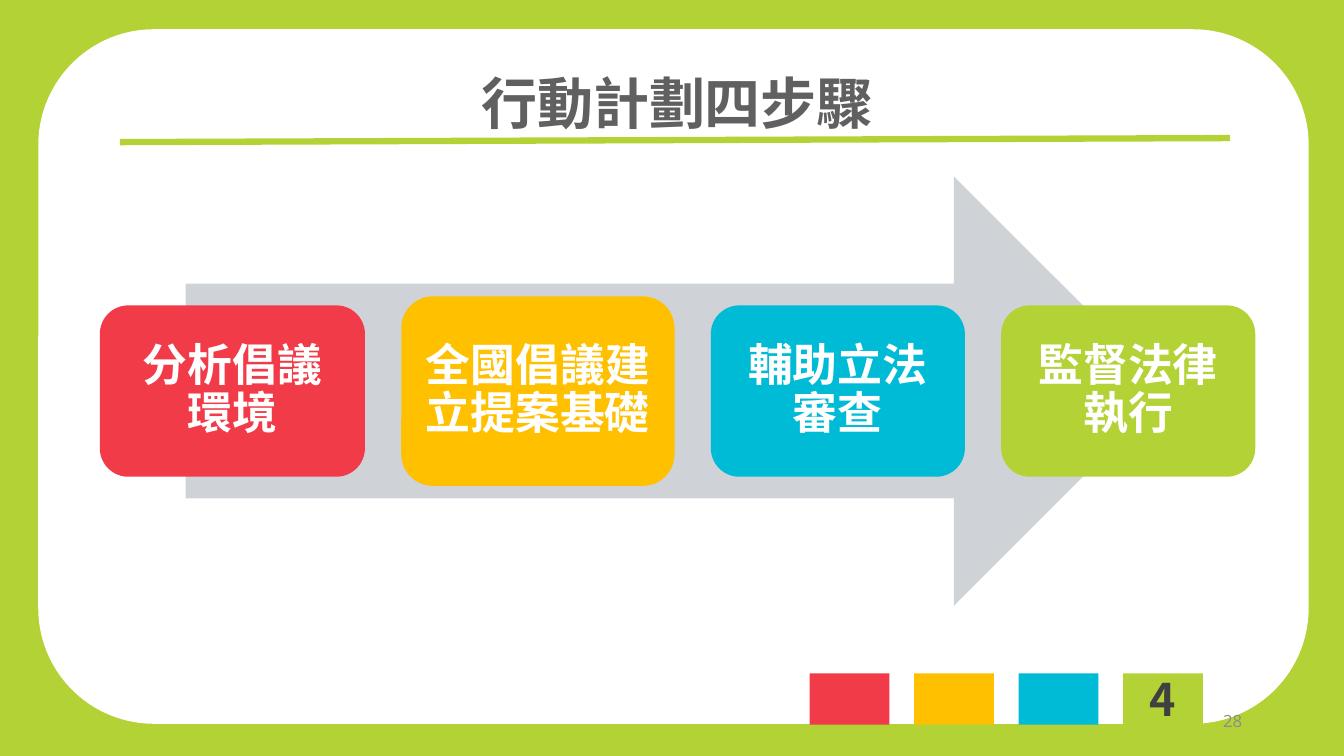
from lxml import etree
from pptx import Presentation
from pptx.dml.color import RGBColor
from pptx.enum.shapes import MSO_CONNECTOR, MSO_SHAPE
from pptx.enum.text import MSO_ANCHOR as Anchor, MSO_AUTO_SIZE, PP_ALIGN as Align
from pptx.oxml.ns import qn
from pptx.util import Inches, Pt

COLORS = {
    "green": "B3D236", "red": "F23B49", "yellow": "FFC000", "blue": "00BBD6",
    "white": "FFFFFF", "arrow": "CFD2D6", "title": "606060",
    "number": "404040", "page": "8C8C8C",
}
CJK_FONT = "Noto Sans CJK SC"
LATIN_FONT = "Open Sans"
STEP_COLORS = ["red", "yellow", "blue", "green"]
STEPS = [
    ("分析倡議環境", 2.63, 1.7),
    ("全國倡議建立提案基礎", 2.71, 1.88),
    ("輔助立法審查", 2.52, 1.7),
    ("監督法律執行", 2.52, 1.7),
]


def rgb(name):
    return RGBColor.from_string(COLORS[name])


def add_block(slide, kind, box, color):
    shape = slide.shapes.add_shape(kind, *map(Inches, box))
    shape.shadow.inherit = False
    shape.fill.solid()
    shape.fill.fore_color.rgb = rgb(color)
    shape.line.fill.background()
    return shape


def write_text(shape, text, color, size, font=CJK_FONT, bold=True, inset=0,
               align=Align.CENTER, anchor=Anchor.MIDDLE, spacing=1.0):
    frame = shape.text_frame
    margins = dict.fromkeys(
        ("margin_left", "margin_top", "margin_right", "margin_bottom"), Inches(inset))
    frame_format = {"word_wrap": True, "auto_size": MSO_AUTO_SIZE.NONE,
                    "vertical_anchor": anchor, **margins}
    for name, value in frame_format.items():
        setattr(frame, name, value)
    paragraph = frame.paragraphs[0]
    paragraph.alignment = align
    paragraph.line_spacing = spacing
    run = paragraph.add_run()
    run.text = text
    for name, value in {"name": font, "size": Pt(size), "bold": bold}.items():
        setattr(run.font, name, value)
    run.font.color.rgb = rgb(color)
    east_asian = etree.SubElement(run.font._element, qn("a:ea"))
    east_asian.set("typeface", font)


def add_panel(slide, box):
    background = slide.background.fill
    background.solid()
    background.fore_color.rgb = rgb("green")
    panel = add_block(slide, MSO_SHAPE.ROUNDED_RECTANGLE, box, "white")
    panel.element.getparent().insert(2, panel.element)


def add_title(slide, box):
    left, top, width, height = box
    title = slide.shapes.title
    position = {"left": left + 0.42, "top": top, "width": width - 0.8, "height": height}
    for name, value in position.items():
        setattr(title, name, Inches(value))
    write_text(title, "行動計劃四步驟", "title", 40, inset=0.05, anchor=Anchor.TOP)
    rule = slide.shapes.add_connector(
        MSO_CONNECTOR.STRAIGHT, Inches(left), Inches(top + 0.78),
        Inches(left + width), Inches(top + 0.74))
    rule.line.color.rgb = rgb("green")
    rule.line.width = Pt(4.5)
    etree.SubElement(rule.element.spPr, qn("a:effectLst"))


def add_process(slide, box):
    left, top, width, height = box
    add_block(slide, MSO_SHAPE.RIGHT_ARROW,
              (left + 0.85, top, width - 1.71, height), "arrow")
    gap = (width - sum(step[1] for step in STEPS)) / (len(STEPS) - 1)
    for (text, card_width, card_height), color in zip(STEPS, STEP_COLORS):
        card_top = top + (height - card_height) / 2
        card = add_block(slide, MSO_SHAPE.ROUNDED_RECTANGLE,
                         (left, card_top, card_width, card_height), color)
        write_text(card, text, "white", 32, inset=0.14, spacing=0.9)
        left += card_width + gap


def add_progress(slide, box):
    left, top, width, height = box
    tile_width = 0.79
    pitch = (width - tile_width) / (len(STEP_COLORS) - 1)
    for index, color in enumerate(STEP_COLORS):
        tile = add_block(slide, MSO_SHAPE.RECTANGLE,
                         (left + index * pitch, top, tile_width, height), color)
    write_text(tile, "4", "number", 32)


def add_page_number(slide, box):
    page = slide.shapes.add_textbox(*map(Inches, box))
    write_text(page, "28", "page", 12, font=LATIN_FONT, bold=False,
               inset=0.1, align=Align.RIGHT)


def main():
    presentation = Presentation()
    presentation.slide_width = Inches(13.33)
    presentation.slide_height = Inches(7.5)
    slide = presentation.slides.add_slide(presentation.slide_layouts[5])
    add_panel(slide, (0.38, 0.29, 12.6, 6.89))
    add_title(slide, (1.19, 0.63, 11.01, 1.45))
    add_process(slide, (0.99, 1.75, 11.46, 4.26))
    add_progress(slide, (8.03, 6.68, 3.9, 0.51))
    add_page_number(slide, (9.42, 6.95, 3, 0.4))
    presentation.save("out.pptx")


if __name__ == "__main__":
    main()
